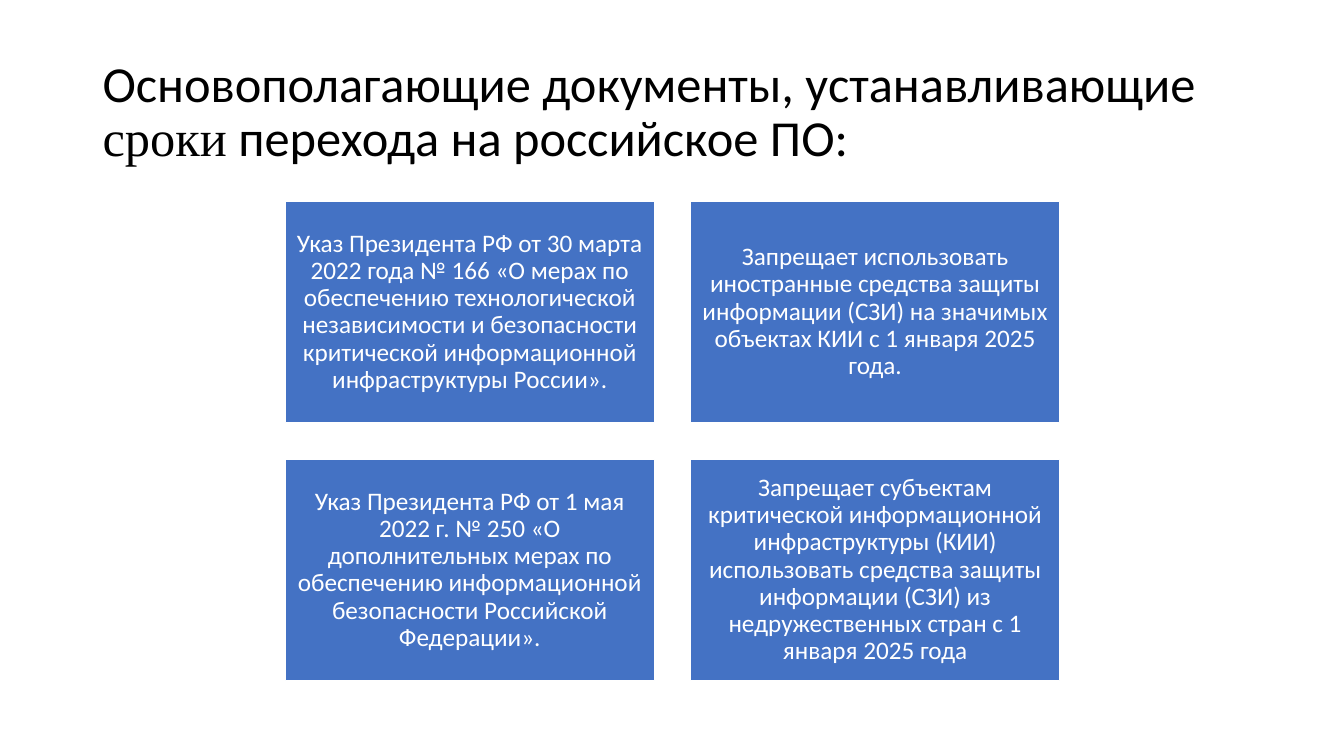
import pptx
import pptx.util
import pptx.dml.color
import pptx.enum.shapes
import pptx.enum.text

Inches = pptx.util.Inches
Pt = pptx.util.Pt
RGBColor = pptx.dml.color.RGBColor
PP_ALIGN = pptx.enum.text.PP_ALIGN

BLACK = RGBColor(0x00, 0x00, 0x00)
WHITE = RGBColor(0xFF, 0xFF, 0xFF)
BLUE = RGBColor(0x44, 0x72, 0xC4)

TITLE_RUNS = [
    ("Основополагающие документы, устанавливающие ", "Calibri"),
    ("сроки", "Times New Roman"),
    (" перехода на российское ПО:", "Calibri"),
]
# Each row pairs a decree with the ban it introduces
DECREES = [
    ("Указ Президента РФ от 30 марта 2022 года № 166 «О мерах по обеспечению "
     "технологической независимости и безопасности критической "
     "информационной инфраструктуры России».",
     "Запрещает использовать иностранные средства защиты информации (СЗИ) "
     "на значимых объектах КИИ с 1 января 2025 года."),
    ("Указ Президента РФ от 1 мая 2022 г. № 250 «О дополнительных мерах по "
     "обеспечению информационной безопасности Российской Федерации».",
     "Запрещает субъектам критической информационной инфраструктуры (КИИ) "
     "использовать средства защиты информации (СЗИ) из недружественных "
     "стран с 1 января 2025 года"),
]
LEFT, TOP = 2.83, 2
BOX_W, BOX_H = 3.66, 2.19
GAP_X, GAP_Y = 0.36, 0.37
BOX_MARGINS = {
    f"margin_{side}": Inches(0.07) for side in ("left", "top", "right", "bottom")
}


def fill_text(s, runs, size, color, align, margins):
    """Put one middle-anchored paragraph of (text, font) runs into a shape."""
    tf = s.text_frame
    tf.word_wrap = True
    tf.vertical_anchor = pptx.enum.text.MSO_ANCHOR.MIDDLE
    for name, value in margins.items():
        setattr(tf, name, value)
    p = tf.paragraphs[0]
    p.alignment = align
    p.line_spacing = 0.9
    for text, font in runs:
        r = p.add_run()
        r.text = text
        r.font.color.rgb = color
        for name, value in {"name": font, "size": Pt(size)}.items():
            setattr(r.font, name, value)


prs = pptx.Presentation()
prs.slide_width = Inches(13.33)
prs.slide_height = Inches(7.5)
slide = prs.slides.add_slide(prs.slide_layouts[6])

title = slide.shapes.add_textbox(Inches(0.92), Inches(0.4), Inches(11.5), Inches(1.45))
fill_text(title, TITLE_RUNS, 36, BLACK, PP_ALIGN.LEFT, {})

for row, texts in enumerate(DECREES):
    for col, text in enumerate(texts):
        s = slide.shapes.add_shape(
            pptx.enum.shapes.MSO_SHAPE.RECTANGLE,
            Inches(LEFT + col * (BOX_W + GAP_X)),
            Inches(TOP + row * (BOX_H + GAP_Y)),
            Inches(BOX_W), Inches(BOX_H),
        )
        s.shadow.inherit = False
        s.fill.solid()
        s.fill.fore_color.rgb = BLUE
        s.line.color.rgb = WHITE
        s.line.width = Pt(1)
        fill_text(s, [(text, "Calibri")], 18, WHITE, PP_ALIGN.CENTER, BOX_MARGINS)

prs.save("out.pptx")
